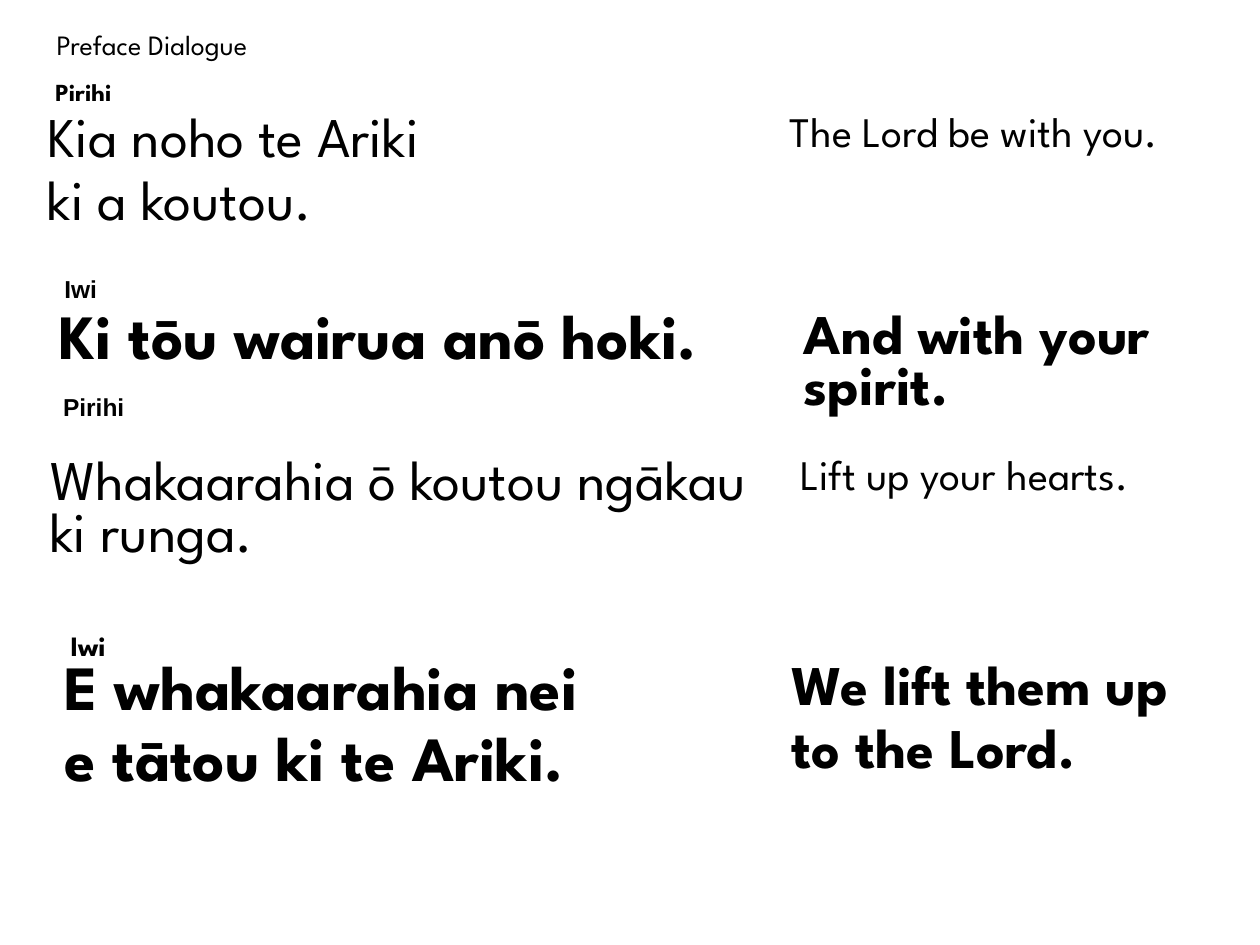
from pptx import Presentation
from pptx.dml.color import RGBColor
from pptx.enum.text import MSO_ANCHOR
from pptx.util import Inches, Pt

COLOURS = {"text": "000000"}
SPARTAN = "League Spartan"

deck = Presentation()
deck.slide_width, deck.slide_height = Inches(10), Inches(7.5)
page = deck.slides.add_slide(deck.slide_layouts[6])


def grid(*counts):
    """Turn counts on a grid of 100 columns by 75 rows into lengths."""
    return [round(deck.slide_width * count / 100) for count in counts]


def write(frame, lines, size, bold, font=SPARTAN, gap=0.0):
    """Fill a text frame, one paragraph a line, with gap as a share of the size."""
    frame.word_wrap = True
    for number, line in enumerate(lines):
        para = frame.paragraphs[0] if number == 0 else frame.add_paragraph()
        para.space_before = Pt(round(size * gap, 1))
        span = para.add_run()
        span.text = line
        for name, value in {"name": font, "size": Pt(size), "bold": bold}.items():
            setattr(span.font, name, value)
        span.font.color.rgb = RGBColor.from_string(COLOURS["text"])


# Each verse: left, top, height, bold, then for Māori and English:
# column width, left inset, text size, lines
verses = [
    (1.9, 9.2, 12.1, False,
     (59.9, 1.9, 32, ["Kia noho te Ariki", "ki a koutou."]),
     (36.1, 0.9, 24, ["The Lord be with you."])),
    (3.5, 24.8, 11.1, True,
     (60.1, 1.2, 36, ["Ki tōu wairua anō hoki."]),
     (33.6, 0.2, 32, ["And with your spirit."])),
    (3.8, 36.4, 12.6, False,
     (58.9, 0.2, 32, ["Whakaarahia ō koutou ngākau ki runga."]),
     (34.9, 0.8, 24, ["Lift up your hearts."])),
    (3.9, 52.7, 13.6, True,
     (58.7, 1.2, 36, ["E whakaarahia nei", "e tātou ki te Ariki."]),
     (36.6, 0.2, 32, ["We lift them up", "to the Lord."])),
]
for left, top, height, bold, *languages in verses:
    width = sum(language[0] for language in languages)
    table = page.shapes.add_table(1, 2, *grid(left, top, width, height)).table
    table.first_row = table.horz_banding = False
    for column, (column_width, inset, size, lines) in enumerate(languages):
        table.columns[column].width = grid(column_width)[0]
        cell = table.cell(0, column)
        cell.fill.background()
        cell.margin_left = grid(inset)[0]
        cell.margin_right = cell.margin_top = cell.margin_bottom = grid(0.2)[0]
        write(cell.text_frame, lines, size, bold, gap=0.2)

# Each label: left, top, left inset, text, size, bold, font
labels = [
    (3.5, 1.6, 1.0, "Preface Dialogue", 16, False, SPARTAN),
    (2.0, 5.4, 2.4, "Pirihi", 14, True, SPARTAN),
    (3.7, 21.0, 1.4, "Iwi", 14, True, "Arial"),
    (2.0, 30.4, 3.0, "Pirihi", 14, True, "Arial"),
    (3.7, 49.3, 1.9, "Iwi", 16, True, SPARTAN),
]
for left, top, inset, text, size, bold, font in labels:
    box = page.shapes.add_textbox(*grid(left, top, 56.8, 3.8))
    box.text_frame.vertical_anchor = MSO_ANCHOR.MIDDLE
    box.text_frame.margin_left = grid(inset)[0]
    write(box.text_frame, [text], size, bold, font)

deck.save("out.pptx")
